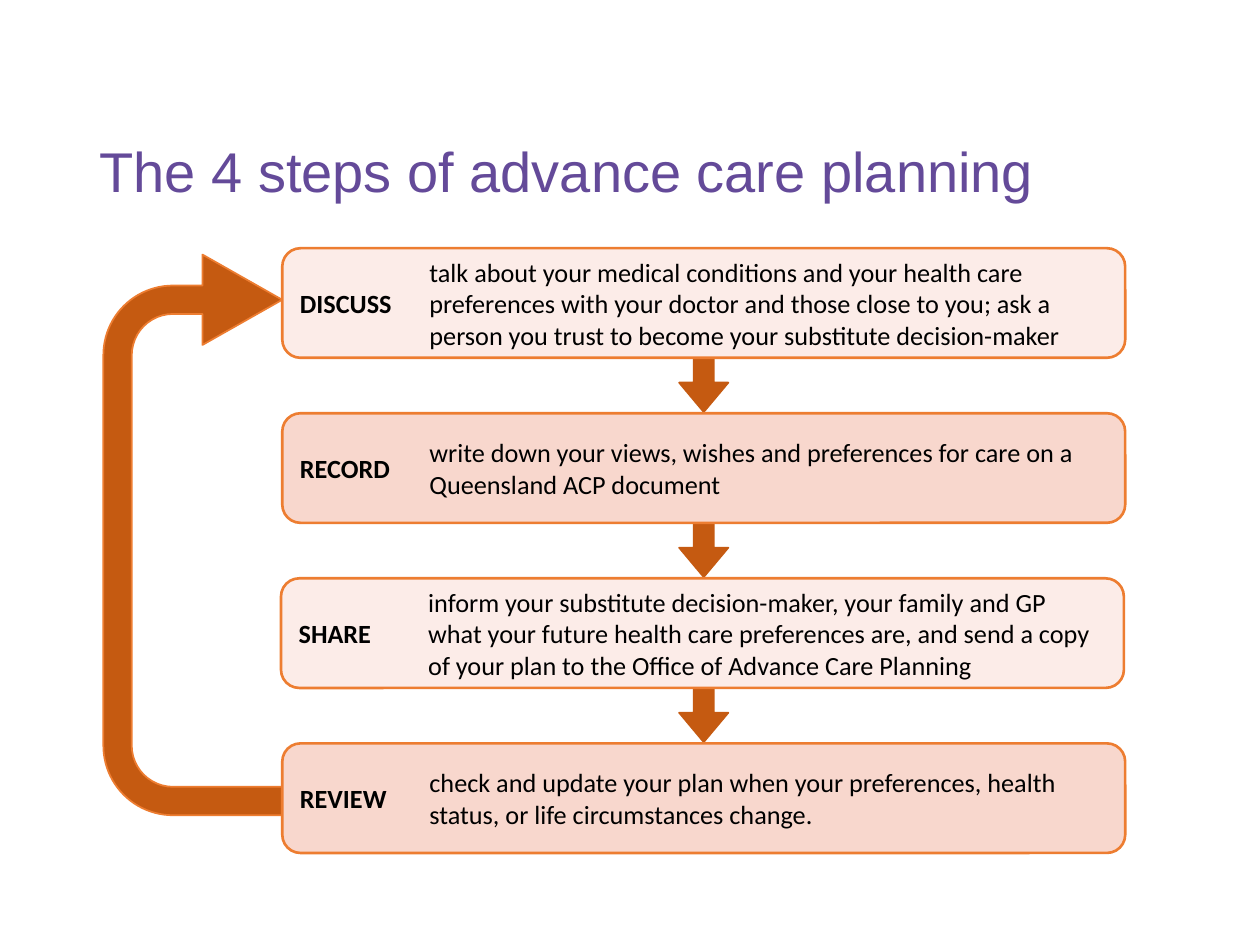
from dataclasses import dataclass

from pptx import Presentation
from pptx.dml.color import RGBColor
from pptx.enum.shapes import MSO_SHAPE
from pptx.enum.text import MSO_ANCHOR, MSO_AUTO_SIZE, PP_ALIGN
from pptx.util import Inches, Pt

ROUND, DOWN, UTURN = (MSO_SHAPE.ROUNDED_RECTANGLE, MSO_SHAPE.DOWN_ARROW,
                      MSO_SHAPE.U_TURN_ARROW)
LEFT, MIDDLE = PP_ALIGN.LEFT, MSO_ANCHOR.MIDDLE
FIXED, GROW = MSO_AUTO_SIZE.NONE, MSO_AUTO_SIZE.SHAPE_TO_FIT_TEXT

# Content: step, description, lines it fills, shift to the right
TITLE = "The 4 steps of advance care planning"
STEPS = [
    ("DISCUSS", "talk about your medical conditions and your health care "
     "preferences with your doctor and those close to you; ask a person you "
     "trust to become your substitute decision-maker", 3, 0),
    ("RECORD", "write down your views, wishes and preferences for care on a "
     "Queensland ACP document", 2, 0),
    ("SHARE", "inform your substitute decision-maker, your family and GP what "
     "your future health care preferences are, and send a copy of your plan "
     "to the Office of Advance Care Planning", 3, -0.01),
    ("REVIEW", "check and update your plan when your preferences, health "
     "status, or life circumstances change.", 2, 0),
]


@dataclass
class Theme:
    purple: str = "644A99"
    edge: str = "ED7D31"
    arrow: str = "C55A11"
    fills: tuple = ("FCECE8", "F8D7CD")
    ink: str = "000000"
    head: str = "Arial"
    body: str = "Calibri"
    big: int = 32
    small: int = 15


look = Theme()

# Layout in inches
BOX_X, BOX_Y, BOX_W, BOX_H = 2.24, 1.97, 6.69, 0.87
PITCH = 1.31
NOTE_X, NOTE_W = 3.31, 5.51
LINE_H, PAD = 0.25, 0.11
ARROW_W, ARROW_H = 0.39, 0.43


def place(shape, *spot):
    shape.left, shape.top, shape.width, shape.height = map(Inches, spot)


def write(shape, text, font=look.body, size=look.small, color=look.ink,
          bold=False, space=1.0, fit=FIXED):
    frame = shape.text_frame
    frame.word_wrap = True
    frame.auto_size = fit
    frame.vertical_anchor = MIDDLE
    para = frame.paragraphs[0]
    para.alignment = LEFT
    para.line_spacing = space
    run = para.add_run()
    run.text = text
    run.font.name, run.font.size, run.font.bold = font, Pt(size), bold
    run.font.color.rgb = RGBColor.from_string(color)


def draw(slide, kind, spot, fill, line, width=1, adjust=()):
    shape = slide.shapes.add_shape(kind, *map(Inches, spot))
    shape.shadow.inherit = False
    shape.fill.solid()
    shape.fill.fore_color.rgb = RGBColor.from_string(fill)
    shape.line.color.rgb = RGBColor.from_string(line)
    shape.line.width = Pt(width)
    for i, value in enumerate(adjust):
        shape.adjustments[i] = value
    return shape


def main():
    deck = Presentation()
    deck.slide_width, deck.slide_height = Inches(10), Inches(7.5)
    slide = deck.slides.add_slide(deck.slide_layouts[5])

    # Title
    title = slide.shapes.title
    place(title, 0.69, 0.79, 8.63, 1.18)
    write(title, TITLE, font=look.head, size=look.big, color=look.purple,
          space=0.9)

    # Loop from the last step back to the first
    loop = draw(slide, UTURN, (-0.35, 3.19, 4.45, 2.11), look.arrow, look.edge,
                adjust=(0.107, 0.17, 0.3, 0.262, 0.673))
    loop.rotation = 270

    # Steps, each with an arrow to the next
    for i, (name, note, lines, shift) in enumerate(STEPS):
        top = BOX_Y + i * PITCH
        if i < len(STEPS) - 1:
            mid = BOX_X + BOX_W / 2
            draw(slide, DOWN,
                 (mid - ARROW_W / 2, top + BOX_H, ARROW_W, ARROW_H),
                 look.arrow, look.arrow, adjust=(0.403, 0.597))
        box = draw(slide, ROUND, (BOX_X + shift, top, BOX_W, BOX_H),
                   look.fills[i % 2], look.edge, 1.5)
        write(box, name, bold=True)
        high = lines * LINE_H + PAD
        area = (NOTE_X + shift, top + (BOX_H - high) / 2, NOTE_W, high)
        text = slide.shapes.add_textbox(*map(Inches, area))
        write(text, note, fit=GROW)

    deck.save("out.pptx")


if __name__ == "__main__":
    main()
